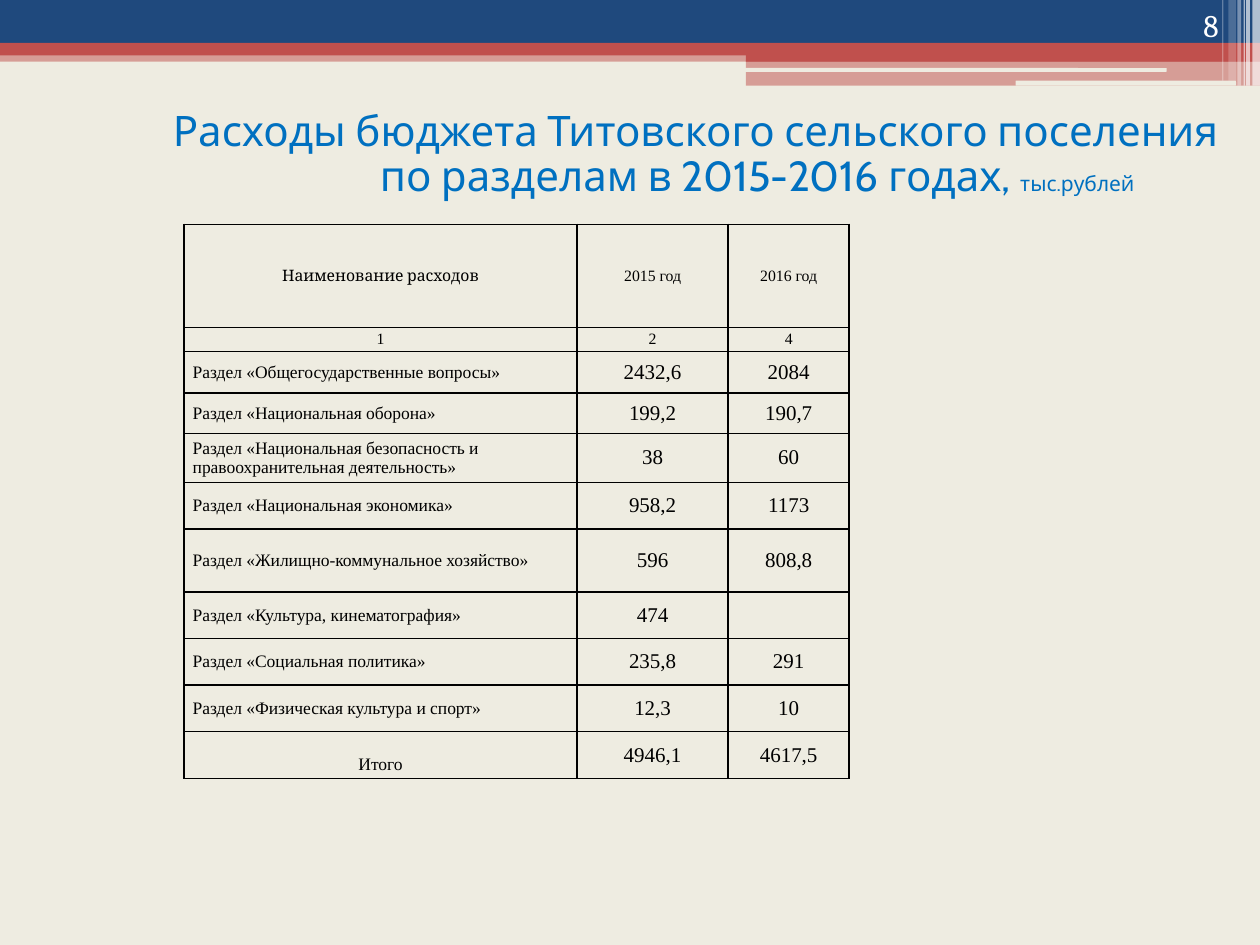
from dataclasses import dataclass

from lxml.etree import SubElement
from pptx import Presentation
from pptx.dml.color import RGBColor
from pptx.enum.shapes import MSO_SHAPE
from pptx.enum.text import MSO_ANCHOR, MSO_AUTO_SIZE, PP_ALIGN
from pptx.oxml.ns import qn
from pptx.util import Inches, Pt

COLUMNS, ROWS = 100, 75
CELL = Inches(0.1)


@dataclass(frozen=True)
class Theme:
    paper: str = "EEECE1"
    navy: str = "1F497D"
    red: str = "C0504D"
    white: str = "FFFFFF"
    black: str = "000000"
    blue: str = "0070C0"
    title_font: str = "Cabin"
    serif_font: str = "Cambria"
    table_font: str = "Times New Roman"
    title_size: int = 24
    unit_size: int = 12
    page_size: int = 18
    head_size: int = 9
    label_size: int = 10
    value_size: int = 12


THEME = Theme()

BANDS = [
    (0, 4, 100, 0.9, THEME.red, 50),
    (0, 0, 100, 3.4, THEME.navy, 100),
    (0, 3.4, 100, 1, THEME.red, 100),
    (59.2, 3.9, 40.8, 1, THEME.red, 100),
    (59.2, 4.8, 40.8, 2, THEME.red, 50),
]
SLOTS = [(59.1, 5.4, 33.5, 0.3), (80.6, 6.4, 17.5, 0.4)]
STRIPES = [
    (99.4, 0.6, 6.8, 65),
    (98.9, 0.3, 6.8, 65),
    (98.7, 0.1, 6.8, 60),
    (98.2, 0.3, 6.8, 40),
    (97.5, 0.6, 6.4, 20),
    (97, 0.1, 6.4, 30),
]

TABLE_COLUMNS = [31.2, 12, 9.6]
TABLE_ROWS = [8.2, 1.9, 3.3, 3.2, 3.9, 3.7, 5, 3.7, 3.7, 3.7, 3.7]
HEADINGS = [
    ("Наименование расходов", "2015 год", "2016 год"),
    ("1", "2", "4"),
]
EXPENSES = [
    ("Раздел «Общегосударственные вопросы»", "2432,6", "2084"),
    ("Раздел «Национальная оборона»", "199,2", "190,7"),
    ("Раздел «Национальная безопасность и правоохранительная деятельность»", "38", "60"),
    ("Раздел «Национальная экономика»", "958,2", "1173"),
    ("Раздел «Жилищно-коммунальное хозяйство»", "596", "808,8"),
    ("Раздел «Культура, кинематография»", "474", ""),
    ("Раздел «Социальная политика»", "235,8", "291"),
    ("Раздел «Физическая культура и спорт»", "12,3", "10"),
]
TOTAL = ("Итого", "4946,1", "4617,5")


def grid(*cells):
    return [round(CELL * cell) for cell in cells]


def style_font(font, name, size, color):
    font.name = name
    font.size = Pt(size)
    font.color.rgb = RGBColor.from_string(color)


def add_bar(page, place, color, opacity=100, kind=MSO_SHAPE.RECTANGLE):
    bar = page.shapes.add_shape(kind, *grid(*place))
    bar.shadow.inherit = False
    bar.line.fill.background()
    bar.fill.solid()
    bar.fill.fore_color.rgb = RGBColor.from_string(color)
    if opacity < 100:
        tint = bar.fill._xPr.find(qn("a:solidFill"))[0]
        SubElement(tint, qn("a:alpha"), val=str(opacity * 1000))


def add_header(page):
    for *place, color, opacity in BANDS:
        add_bar(page, place, color, opacity)
    for place in SLOTS:
        add_bar(page, place, THEME.paper, kind=MSO_SHAPE.ROUNDED_RECTANGLE)
    for left, width, height, opacity in STRIPES:
        add_bar(page, (left, 0, width, height), THEME.white, opacity)


def add_title_line(para, indent, spans):
    para.alignment = PP_ALIGN.CENTER
    para.line_spacing = 0.88
    properties = para._p.get_or_add_pPr()
    properties.set("marL", str(grid(indent)[0]))
    properties.set("indent", "0")
    for text, size in spans:
        span = para.add_run()
        span.text = text
        style_font(span.font, THEME.title_font, size, THEME.blue)


def fill_title(page):
    title = page.shapes.title
    title.left, title.top, title.width, title.height = grid(0, 8.4, COLUMNS, 7.9)
    frame = title.text_frame
    frame.auto_size = MSO_AUTO_SIZE.NONE
    frame.word_wrap = True
    frame.vertical_anchor = MSO_ANCHOR.MIDDLE
    frame.margin_top = frame.margin_bottom = 0
    add_title_line(frame.paragraphs[0], 10.4, [
        ("Расходы бюджета Титовского сельского поселения", THEME.title_size),
    ])
    add_title_line(frame.add_paragraph(), 20.2, [
        ("по разделам в 2015-2016 годах, ", THEME.title_size),
        ("тыс.рублей", THEME.unit_size),
    ])


def add_page_number(page, number):
    box = page.shapes.add_textbox(*grid(89.4, 0, 8.3, 4))
    frame = box.text_frame
    frame.word_wrap = True
    frame.vertical_anchor = MSO_ANCHOR.BOTTOM
    para = frame.paragraphs[0]
    para.text = number
    para.alignment = PP_ALIGN.RIGHT
    style_font(para.font, THEME.serif_font, THEME.page_size, THEME.white)


def draw_borders(cell):
    properties = cell._tc.get_or_add_tcPr()
    for position, side in enumerate(("a:lnL", "a:lnR", "a:lnT", "a:lnB")):
        line = SubElement(properties, qn(side), w=str(Pt(1)))
        fill = SubElement(line, qn("a:solidFill"))
        SubElement(fill, qn("a:srgbClr"), val=THEME.black)
        properties.insert(position, line)


def fill_cell(cell, text, size, font=THEME.table_font, align=PP_ALIGN.CENTER):
    cell.fill.background()
    draw_borders(cell)
    cell.vertical_anchor = MSO_ANCHOR.MIDDLE
    cell.margin_left = cell.margin_right = Inches(0.07)
    cell.margin_top = cell.margin_bottom = 0
    para = cell.text_frame.paragraphs[0]
    para.text = text
    para.alignment = align
    style_font(para.font, font, size, THEME.black)


def add_expense_table(page):
    place = grid(14.6, 17.8, sum(TABLE_COLUMNS), sum(TABLE_ROWS))
    table = page.shapes.add_table(len(TABLE_ROWS), len(TABLE_COLUMNS), *place).table
    table.first_row = table.horz_banding = False
    for column, width in zip(table.columns, grid(*TABLE_COLUMNS)):
        column.width = width
    for row, height in zip(table.rows, grid(*TABLE_ROWS)):
        row.height = height

    for index, (label, *values) in enumerate(HEADINGS + EXPENSES + [TOTAL]):
        heading = index < len(HEADINGS)
        label_cell, *value_cells = table.rows[index].cells
        centered = heading or label == TOTAL[0]
        fill_cell(
            label_cell,
            label,
            THEME.head_size if heading else THEME.label_size,
            THEME.serif_font if index == 0 else THEME.table_font,
            PP_ALIGN.CENTER if centered else PP_ALIGN.LEFT,
        )
        for cell, value in zip(value_cells, values):
            fill_cell(cell, value, THEME.head_size if heading else THEME.value_size)
    table.cell(len(TABLE_ROWS) - 1, 0).margin_top = Inches(0.15)


def main():
    deck = Presentation()
    deck.slide_width, deck.slide_height = grid(COLUMNS, ROWS)
    page = deck.slides.add_slide(deck.slide_layouts[5])
    page.background.fill.solid()
    page.background.fill.fore_color.rgb = RGBColor.from_string(THEME.paper)
    add_header(page)
    fill_title(page)
    add_page_number(page, "8")
    add_expense_table(page)
    deck.save("out.pptx")


if __name__ == "__main__":
    main()
